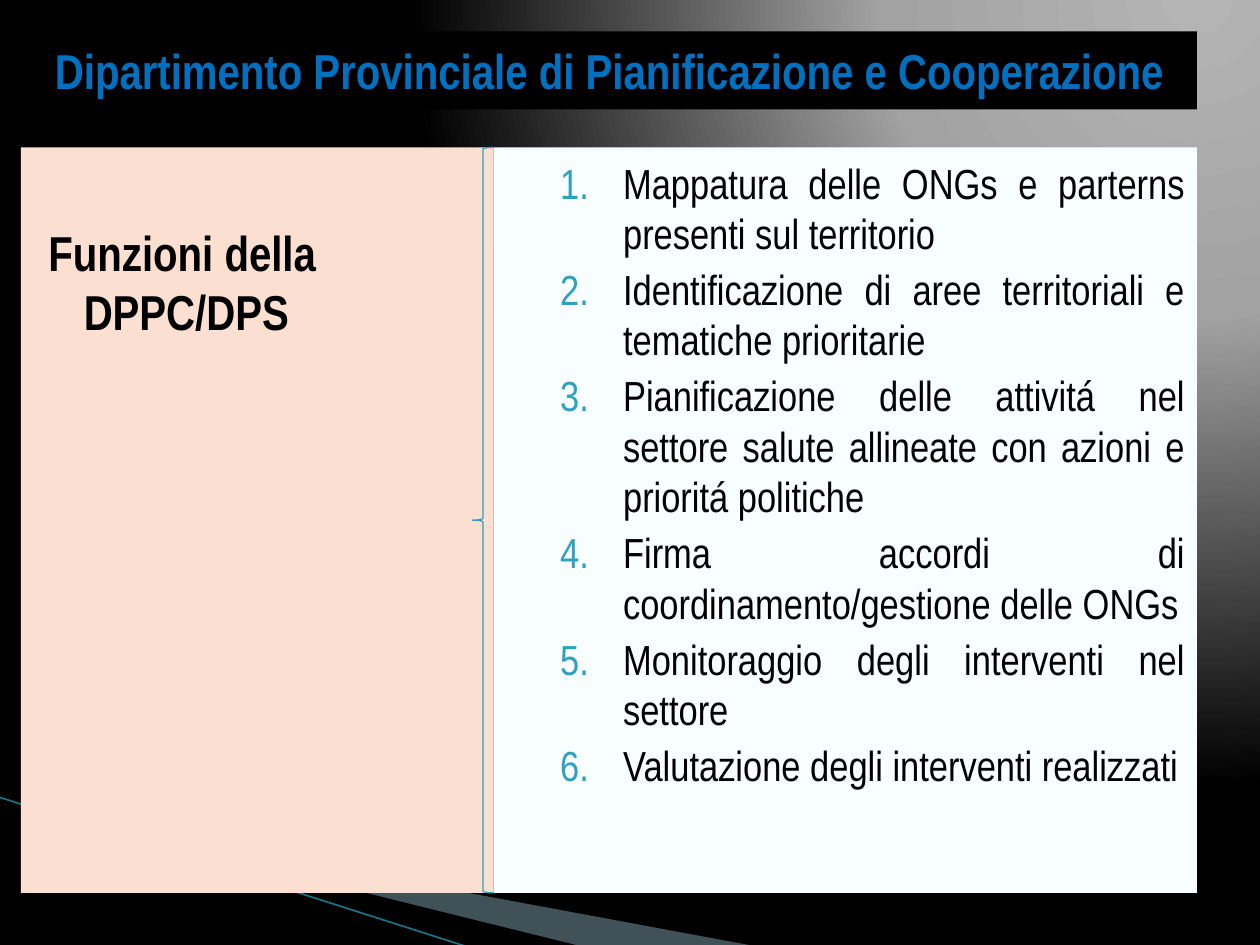
import pptx
import pptx.dml.color
import pptx.enum.shapes
import pptx.enum.text
import pptx.oxml
import pptx.oxml.ns
import pptx.util
from pptx.util import Pt

FONT = "Arial Narrow"
TEAL = "2DA2BF"
MARGIN, RIGHT, SPLIT = 12, 684, 282
PANEL_TOP, PANEL_HEIGHT = 84.25, 426
FUNCTIONS = [
    "Mappatura delle ONGs e parterns presenti sul territorio",
    "Identificazione di aree territoriali e tematiche prioritarie",
    "Pianificazione delle attivitá nel settore salute allineate con azioni e prioritá politiche",
    "Firma accordi di coordinamento/gestione delle ONGs",
    "Monitoraggio degli interventi nel settore",
    "Valutazione degli interventi realizzati",
]


def color(value):
    return pptx.dml.color.RGBColor.from_string(value)


def add_xml(parent, tag, **attributes):
    child = pptx.oxml.parse_xml(f"<{tag} {pptx.oxml.ns.nsdecls('a')}/>")
    for name, value in attributes.items():
        child.set(name, str(value))
    parent.append(child)
    return child


class Painter:
    """Holds the style and the page being drawn."""

    def __init__(self, page, font):
        self.page = page
        self.font = font

    def background(self, stops, focus):
        """Fill the page with a circular gradient around the focus rectangle."""
        self.page.background.fill.gradient()
        gradient = next(self.page.element.iter(pptx.oxml.ns.qn("a:gradFill")))
        for child in list(gradient):
            gradient.remove(child)
        stop_list = add_xml(gradient, "a:gsLst")
        for position, value in stops:
            stop = add_xml(stop_list, "a:gs", pos=position * 1000)
            add_xml(stop, "a:srgbClr", val=value)
        circle = add_xml(gradient, "a:path", path="circle")
        sides = {side: share * 1000 for side, share in zip("ltrb", focus)}
        add_xml(circle, "a:fillToRect", **sides)

    def polygon(self, points, fill, alpha=100):
        builder = self.page.shapes.build_freeform(*points[0], scale=Pt(1))
        builder.add_line_segments(points[1:])
        shape = builder.convert_to_shape()
        shape.shadow.inherit = False
        shape.fill.solid()
        shape.fill.fore_color.rgb = color(fill)
        shape.line.fill.background()
        if alpha < 100:
            value = next(shape.element.spPr.iter(pptx.oxml.ns.qn("a:srgbClr")))
            add_xml(value, "a:alpha", val=alpha * 1000)

    def line(self, start, end, value, width):
        connector = self.page.shapes.add_connector(
            pptx.enum.shapes.MSO_CONNECTOR.STRAIGHT,
            *(Pt(length) for length in (*start, *end)))
        connector.line.color.rgb = color(value)
        connector.line.width = Pt(width)
        add_xml(connector.element.spPr, "a:effectLst")

    def shape(self, kind, left, top, width, height):
        shape = self.page.shapes.add_shape(
            kind, Pt(left), Pt(top), Pt(width), Pt(height))
        shape.shadow.inherit = False
        return shape

    def panel(self, place, fill, lines, size, ink, align, bold=False, inset=3.6,
              middle=False, indent=(0, 0), gap=0, numbers=None):
        """Draw a filled rectangle with text; numbers is the colour of a numbered list."""
        box = self.shape(pptx.enum.shapes.MSO_SHAPE.RECTANGLE, *place)
        box.fill.solid()
        box.fill.fore_color.rgb = color(fill)
        box.line.fill.background()
        frame = box.text_frame
        frame.word_wrap = True
        frame.margin_top = Pt(inset)
        anchors = pptx.enum.text.MSO_ANCHOR
        frame.vertical_anchor = anchors.MIDDLE if middle else anchors.TOP
        frame.text = "\n".join(lines)
        for index, para in enumerate(frame.paragraphs):
            para.alignment = align
            para.space_before = Pt(gap if index else 0)
            properties = para._p.get_or_add_pPr()
            properties.set("marL", str(Pt(indent[0])))
            properties.set("indent", str(Pt(indent[1])))
            if numbers:
                bullet = add_xml(properties, "a:buClr")
                add_xml(bullet, "a:srgbClr", val=numbers)
                add_xml(properties, "a:buFont", typeface=self.font)
                add_xml(properties, "a:buAutoNum", type="arabicPeriod")
            for span in para.runs:
                span.font.name = self.font
                span.font.size = Pt(size)
                span.font.bold = bold
                span.font.color.rgb = color(ink)

    def brace(self, place, value, width):
        shape = self.shape(pptx.enum.shapes.MSO_SHAPE.LEFT_BRACE, *place)
        shape.fill.background()
        shape.line.color.rgb = color(value)
        shape.line.width = Pt(width)


def main():
    deck = pptx.Presentation()
    deck.slide_width, deck.slide_height = Pt(720), Pt(540)
    painter = Painter(deck.slides.add_slide(deck.slide_layouts[6]), FONT)
    align = pptx.enum.text.PP_ALIGN

    painter.background([(0, "B4B4B4"), (40, "A2A2A2"), (100, "000000")],
                       (95, -106, 5, 206))
    painter.polygon([(39.6, 468.5), (428.4, 540.5), (328.3, 540.5)], "A0CBDC", 40)
    painter.polygon([(38.5, 467.5), (329, 540.5), (268, 541)], "000000")
    painter.line((-0.5, 455.5), (267, 541), "1A7488", 0.95)

    painter.panel((MARGIN, PANEL_TOP, SPLIT - MARGIN, PANEL_HEIGHT), "FBE0D1",
                  ["Funzioni della DPPC/DPS"], 28, "000000", align.LEFT,
                  bold=True, inset=43, indent=(28.8, -20.2))
    painter.panel((SPLIT, PANEL_TOP, RIGHT - SPLIT, PANEL_HEIGHT), "F8FDFE",
                  FUNCTIONS, 24, "000000", align.JUSTIFY, inset=5.5,
                  indent=(67, -36), gap=3.2, numbers=TEAL)
    painter.panel((MARGIN, 18, RIGHT - MARGIN, 44.5), "000000",
                  ["Dipartimento Provinciale di Pianificazione e Cooperazione"],
                  28, "0070C0", align.CENTER, bold=True, middle=True)
    painter.brace((SPLIT - 12, PANEL_TOP, 12, PANEL_HEIGHT), TEAL, 0.75)
    deck.save("out.pptx")


if __name__ == "__main__":
    main()
